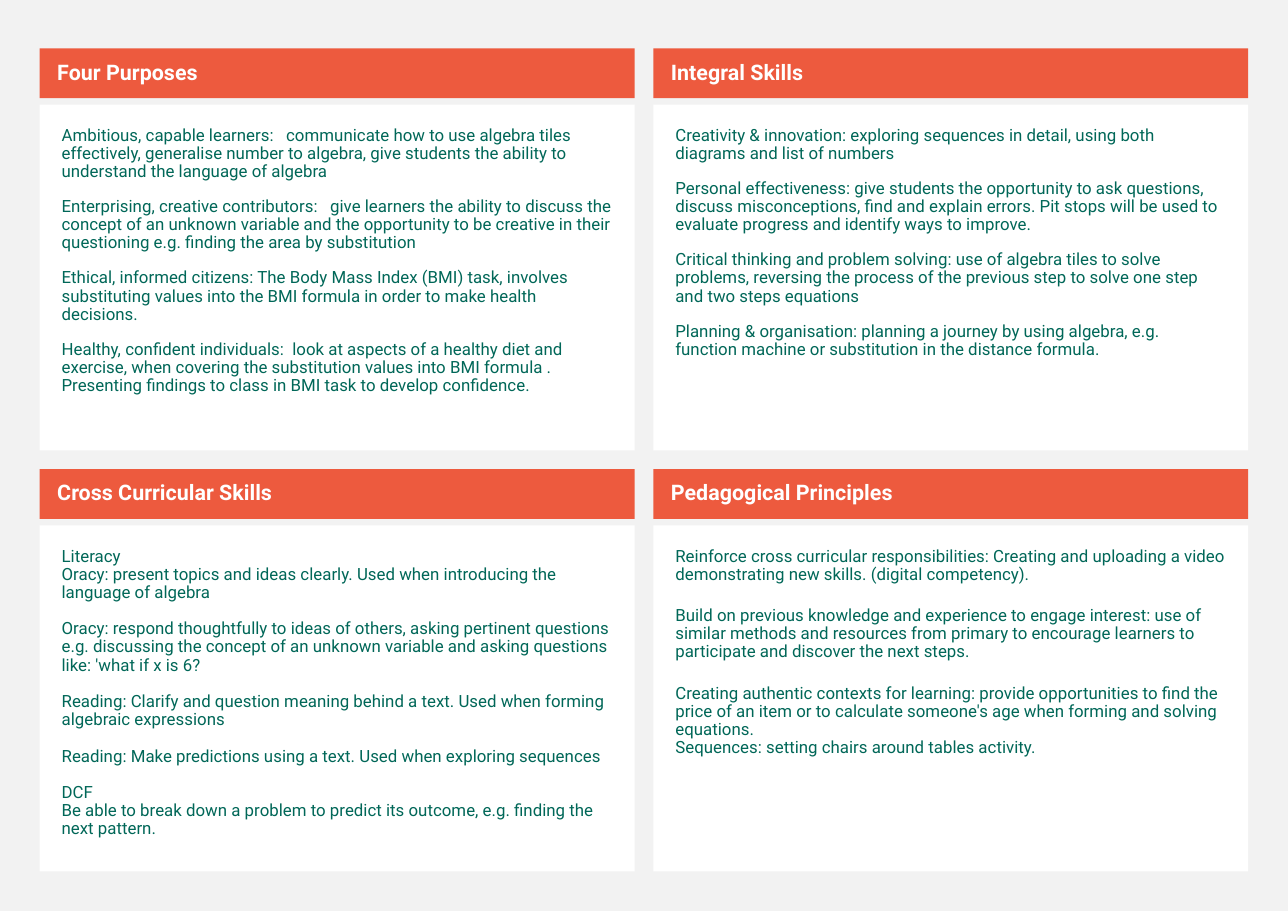
from dataclasses import dataclass

from pptx import Presentation
from pptx import util as u
from pptx.dml.color import RGBColor
from pptx.enum import shapes, text


@dataclass(frozen=True)
class Theme:
    font: str = "Roboto"
    heading_size: int = 14
    body_size: int = 11
    line_spacing: float = 0.9
    backdrop: str = "F2F2F2"
    banner: str = "ED5A3E"
    banner_text: str = "FFFFFF"
    card: str = "FFFFFF"
    card_text: str = "006758"


@dataclass(frozen=True)
class Grid:
    """Two columns and two rows of panels, in inches."""
    width: float = 11.69
    height: float = 8.27
    left: float = 0.36
    top: float = 0.44
    gutter: float = 0.17
    panel_width: float = 5.4
    banner_height: float = 0.45
    seam: float = 0.06
    card_height: float = 3.14

    def column(self, index: int) -> float:
        return self.left + index * (self.panel_width + self.gutter)

    def row(self, index: int) -> float:
        panel_height = self.banner_height + self.seam + self.card_height
        return self.top + index * (panel_height + self.gutter)


@dataclass(frozen=True)
class Panel:
    """Each topic is a group of paragraphs; topic_gap, in points, parts them."""
    column: int
    row: int
    heading: str
    topic_gap: float
    topics: tuple[tuple[str, ...], ...]


THEME = Theme()
GRID = Grid()
BANNER_INSETS = (0.16, 0.05, 0.1, 0.05)
CARD_INSETS = (0.2, 0.2, 0.2, 0.2)

PANELS = (
    Panel(0, 0, "Four Purposes", 11, (
        ("Ambitious, capable learners:   communicate how to use algebra tiles effectively, "
         "generalise number to algebra, give students the "
         "ability to understand the language of algebra",),
        ("Enterprising, creative contributors:   give learners the ability to discuss the "
         "concept of an unknown variable and the opportunity to be creative in their "
         "questioning e.g. finding the area by substitution",),
        ("Ethical, informed citizens: The Body Mass Index (BMI) "
         "task, involves substituting values into the BMI formula in order to make "
         "health decisions.",),
        ("Healthy, confident individuals:  look at aspects of a healthy diet and "
         "exercise, when covering the substitution values into BMI "
         "formula . Presenting findings to class in BMI task to develop confidence.",),
    )),
    Panel(1, 0, "Integral Skills", 11, (
        ("Creativity & innovation: exploring sequences in detail, using both "
         "diagrams and list of numbers",),
        ("Personal effectiveness: give students the opportunity "
         "to ask questions, discuss misconceptions, find and explain "
         "errors. Pit stops will be used to evaluate progress and identify "
         "ways to improve.",),
        ("Critical thinking and problem solving: use of algebra tiles to solve "
         "problems, reversing the process of the previous step to solve one step "
         "and two steps equations",),
        ("Planning & organisation: planning a journey by using algebra, e.g. function "
         "machine or substitution in the distance formula.",),
    )),
    Panel(0, 1, "Cross Curricular Skills", 11.9, (
        ("Literacy",
         "Oracy: present topics and ideas clearly. "
         "Used when introducing the language of algebra"),
        ("Oracy: respond thoughtfully to ideas of others, asking pertinent "
         "questions e.g. discussing the concept of an unknown variable "
         "and asking questions like: 'what if x is 6?",),
        ("Reading: Clarify and question meaning behind a text. Used "
         "when forming algebraic expressions",),
        ("Reading: Make predictions using a text. Used when exploring sequences",),
        ("DCF",
         "Be able to break down a problem to predict its outcome, e.g. finding the "
         "next pattern."),
    )),
    Panel(1, 1, "Pedagogical Principles", 15.2, (
        ("Reinforce cross curricular responsibilities: Creating and uploading a video "
         "demonstrating new skills. (digital competency).",),
        ("Build on previous knowledge and experience to engage interest: use of "
         "similar methods and resources from primary to encourage learners to "
         "participate and discover the next steps.",),
        ("Creating authentic contexts for learning: provide opportunities to find the "
         "price of an item or to calculate someone's age when forming and "
         "solving equations.",
         "Sequences: setting chairs around tables activity."),
    )),
)


def add_box(slide, panel: Panel, offset: float, height: float, fill: str,
            insets: tuple[float, ...], anchor):
    """Add a flat rectangle below the panel's top and return its text frame."""
    box = slide.shapes.add_shape(
        shapes.MSO_SHAPE.RECTANGLE,
        u.Inches(GRID.column(panel.column)), u.Inches(GRID.row(panel.row) + offset),
        u.Inches(GRID.panel_width), u.Inches(height))
    box.shadow.inherit = False
    box.fill.solid()
    box.fill.fore_color.rgb = RGBColor.from_string(fill)
    box.line.fill.background()
    frame = box.text_frame
    frame.word_wrap = True
    frame.vertical_anchor = anchor
    (frame.margin_left, frame.margin_top,
     frame.margin_right, frame.margin_bottom) = map(u.Inches, insets)
    return frame


def write(paragraph, wording: str, size: int, color: str, bold: bool = False) -> None:
    paragraph.text = wording
    paragraph.alignment = text.PP_ALIGN.LEFT
    paragraph.line_spacing = THEME.line_spacing
    for run in paragraph.runs:
        run.font.name = THEME.font
        run.font.size = u.Pt(size)
        run.font.bold = bold
        run.font.color.rgb = RGBColor.from_string(color)


def add_panel(slide, panel: Panel) -> None:
    banner = add_box(slide, panel, 0, GRID.banner_height, THEME.banner,
                     BANNER_INSETS, text.MSO_ANCHOR.MIDDLE)
    write(banner.paragraphs[0], panel.heading, THEME.heading_size,
          THEME.banner_text, bold=True)

    card = add_box(slide, panel, GRID.banner_height + GRID.seam, GRID.card_height,
                   THEME.card, CARD_INSETS, text.MSO_ANCHOR.TOP)
    for topic_index, topic in enumerate(panel.topics):
        for line_index, wording in enumerate(topic):
            is_first = topic_index == line_index == 0
            paragraph = card.paragraphs[0] if is_first else card.add_paragraph()
            write(paragraph, wording, THEME.body_size, THEME.card_text)
            starts_topic = line_index == 0 and not is_first
            paragraph.space_before = u.Pt(panel.topic_gap if starts_topic else 0)


def main() -> None:
    deck = Presentation()
    deck.slide_width = u.Inches(GRID.width)
    deck.slide_height = u.Inches(GRID.height)
    slide = deck.slides.add_slide(deck.slide_layouts.get_by_name("Blank"))
    slide.background.fill.solid()
    slide.background.fill.fore_color.rgb = RGBColor.from_string(THEME.backdrop)
    for panel in PANELS:
        add_panel(slide, panel)
    deck.save("out.pptx")


if __name__ == "__main__":
    main()
